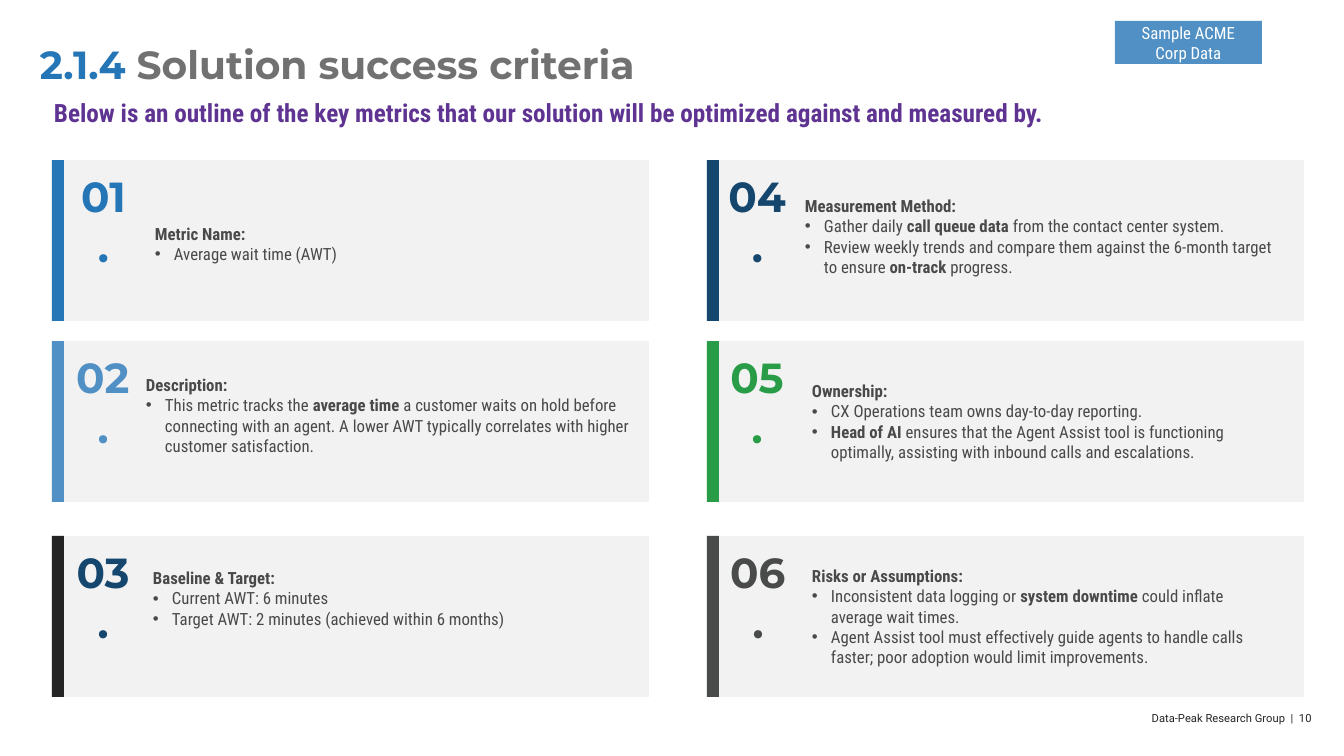
"""Build the solution success criteria slide with six metric cards."""
from lxml import etree
from pptx import Presentation, util as u
from pptx.dml.color import RGBColor
from pptx.enum import shapes, text
from pptx.oxml.ns import qn

PX = 914400 / 100.8
BLUE = RGBColor(0x25, 0x76, 0xB7)
SKY = RGBColor(0x50, 0x90, 0xC4)
NAVY = RGBColor(0x15, 0x46, 0x6D)
GREEN = RGBColor(0x29, 0x9C, 0x47)
BLACK = RGBColor(0x24, 0x24, 0x24)
SLATE = RGBColor(0x49, 0x4A, 0x4A)
BODY = RGBColor(0x49, 0x49, 0x49)
GRAY = RGBColor(0x71, 0x71, 0x71)
PURPLE = RGBColor(0x5E, 0x33, 0x91)
PANEL = RGBColor(0xF2, 0xF2, 0xF2)
WHITE = RGBColor(0xFF, 0xFF, 0xFF)

deck = Presentation()
deck.slide_width, deck.slide_height = (round(n * PX) for n in (1344, 756))
page = deck.slides.add_slide(deck.slide_layouts[6])


def add_box(place, fill=None, **frame_format):
    """Add a filled rectangle, or a text box when there is no fill."""
    place = [round(n * PX) for n in place]
    if fill is None:
        box = page.shapes.add_textbox(*place)
    else:
        box = page.shapes.add_shape(shapes.MSO_SHAPE.RECTANGLE, *place)
        box.shadow.inherit = False
        box.fill.solid()
        box.fill.fore_color.rgb = fill
        box.line.fill.background()
    frame_format = {"word_wrap": True, **frame_format}
    for name, value in frame_format.items():
        if name.startswith("margin"):
            value = round(value * PX)
        setattr(box.text_frame, name, value)
    return box.text_frame


def add_span(para, words, color, name, size, bold=False):
    """Add a run of text in one font."""
    span = para.add_run()
    span.text = words
    for key, value in {"name": name, "size": u.Pt(size), "bold": bold}.items():
        setattr(span.font, key, value)
    span.font.color.rgb = color


NO_MARGINS = dict.fromkeys(("margin_left", "margin_top", "margin_right", "margin_bottom"), 0)
MIDDLE = text.MSO_ANCHOR.MIDDLE
CENTER = text.PP_ALIGN.CENTER

footer = add_box((943, 711, 379, 13), **{**NO_MARGINS, "margin_right": 10}).paragraphs[0]
footer.alignment = text.PP_ALIGN.RIGHT
add_span(footer, "Data-Peak Research Group  |  10", BLACK, "Roboto", 8)

badge = add_box((1115, 21, 147, 43), SKY, vertical_anchor=MIDDLE).paragraphs[0]
badge.alignment = CENTER
add_span(badge, "Sample ACME Corp Data", WHITE, "Roboto Condensed", 12)

title = add_box((40, 46, 759, 45), **NO_MARGINS).paragraphs[0]
title.line_spacing = 0.9
add_span(title, "2.1.4", BLUE, "Montserrat", 28, True)
add_span(title, " Solution success criteria", GRAY, "Montserrat", 28, True)

subtitle = add_box((44, 92, 1010, 40)).paragraphs[0]
add_span(subtitle, "Below is an outline of the key metrics that our solution will be "
         "optimized against and measured by.", PURPLE, "Roboto Condensed", 18, True)

COLUMNS = (52, 707)
ROWS = (160, 341, 536)
CARDS = [
    (BLUE, BLUE, (66, 75), (155, 224, 486), "Metric Name:", ["Average wait time (AWT)"]),
    (SKY, SKY, (61, 84), (146, 375, 486), "Description:", [
        "This metric tracks the **average time** a customer waits on hold before connecting "
        "with an agent. A lower AWT typically correlates with higher customer satisfaction."]),
    (BLACK, NAVY, (61, 84), (153, 568, 486), "Baseline & Target:", [
        "Current AWT: 6 minutes", "Target AWT: 2 minutes (achieved within 6 months)"]),
    (NAVY, NAVY, (713, 89), (805, 196, 472), "Measurement Method:", [
        "Gather daily **call queue data** from the contact center system.",
        "Review weekly trends and compare them against the 6-month target to ensure "
        "**on-track** progress."]),
    (GREEN, GREEN, (715, 84), (812, 381, 458), "Ownership:", [
        "CX Operations team owns day-to-day reporting.",
        "**Head of AI** ensures that the Agent Assist tool is functioning optimally, "
        "assisting with inbound calls and escalations."]),
    (SLATE, SLATE, (715, 86), (812, 566, 458), "Risks or Assumptions:", [
        "Inconsistent data logging or **system downtime** could inflate average wait times.",
        "Agent Assist tool must effectively guide agents to handle calls faster; "
        "poor adoption would limit improvements."]),
]

for index, (bar, ink, (number_left, number_width), (left, top, width), heading, points) in enumerate(CARDS):
    column, row = divmod(index, len(ROWS))
    x, y = COLUMNS[column], ROWS[row]
    add_box((x, y, 597, 161), PANEL)
    add_box((x, y, 12, 161), bar)

    number = add_box((number_left, y + 30, number_width, 62), vertical_anchor=MIDDLE,
                     word_wrap=heading != "Baseline & Target:", margin_left=12, margin_right=12,
                     auto_size=text.MSO_AUTO_SIZE.SHAPE_TO_FIT_TEXT).paragraphs[0]
    number.alignment = CENTER
    add_span(number, f"{index + 1:02}.", ink, "Montserrat", 30, True)

    details = add_box((left, top, width, 20 * (len(points) + 2)), **NO_MARGINS)
    add_span(details.paragraphs[0], heading, BODY, "Roboto Condensed", 12, True)
    for point in points:
        para = details.add_paragraph()
        props = para._p.get_or_add_pPr()
        props.set("marL", str(round(19 * PX)))
        props.set("indent", str(round(-19 * PX)))
        etree.SubElement(props, qn("a:buFont")).set("typeface", "Arial")
        etree.SubElement(props, qn("a:buChar")).set("char", "•")
        for part, words in enumerate(point.split("**")):
            if words:
                add_span(para, words, BODY, "Roboto Condensed", 12, part % 2 == 1)

deck.save("out.pptx")
